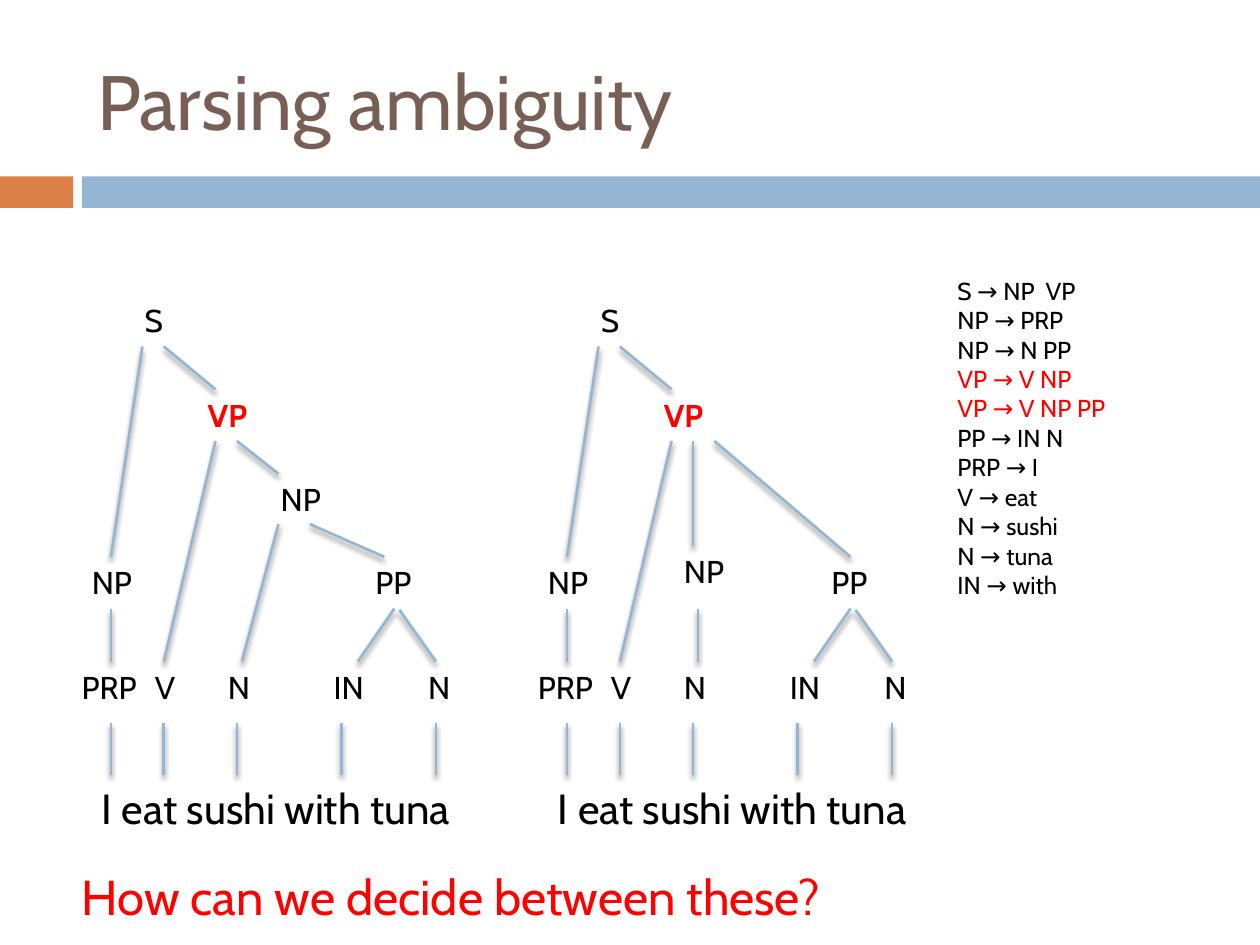
from dataclasses import dataclass

from lxml import etree
from pptx import Presentation
from pptx.dml.color import RGBColor
from pptx.enum.shapes import MSO_CONNECTOR, MSO_SHAPE
from pptx.enum.text import MSO_ANCHOR, MSO_AUTO_SIZE, PP_ALIGN
from pptx.oxml.ns import qn
from pptx.util import Inches, Pt

RECT = MSO_SHAPE.RECTANGLE
STRAIGHT = MSO_CONNECTOR.STRAIGHT
MIDDLE = MSO_ANCHOR.MIDDLE
LEFT = PP_ALIGN.LEFT
GROW = MSO_AUTO_SIZE.SHAPE_TO_FIT_TEXT


@dataclass(frozen=True)
class Theme:
    font: str = "Cabin"
    text: str = "000000"
    title: str = "775F55"
    accent: str = "DD8047"
    line: str = "94B6D2"
    highlight: str = "FF0000"
    title_size: int = 44
    question_size: int = 28
    sentence_size: int = 24
    node_size: int = 18
    rule_size: int = 14
    line_width: float = 1.5


THEME = Theme()

# Tree parts, in inches from the tree's top left corner
LEAF_Y = 2.91
STEM_TOP, STEM_BOTTOM = 3.40, 3.82
STEMS = [0.33, 0.75, 1.33, 2.16, 2.91]
NODES = [  # label, left, top, width
    ("PRP", 0, LEAF_Y, 0.92),
    ("V", 0.58, LEAF_Y, 1.08),
    ("N", 1.16, LEAF_Y, 0.42),
    ("IN", 2.00, LEAF_Y, 0.58),
    ("N", 2.75, LEAF_Y, 0.58),
    ("NP", 0.08, 2.08, 1.08),
    ("PP", 2.33, 2.08, 0.75),
    ("VP", 1.00, 0.75, 0.67),
    ("S", 0.50, 0, 0.67),
]
EDGES = [  # child x, y, parent x, y
    (0.33, LEAF_Y, 0.33, 2.49),
    (2.29, LEAF_Y, 2.58, 2.49),
    (2.91, LEAF_Y, 2.62, 2.50),
    (0.75, LEAF_Y, 1.16, 1.16),
    (0.33, 2.08, 0.58, 0.41),
    (1.16, 0.75, 0.75, 0.41),
]

# What differs: the object noun phrase holds the PP, or stands beside it
NESTED_NP = ("NP", 1.58, 1.42, 0.67)
NESTED_EDGES = [(1.37, LEAF_Y, 1.66, 1.82), (2.50, 2.08, 1.91, 1.82),
                (1.66, 1.42, 1.33, 1.16)]
FLAT_NP = ("NP", 1.16, 1.99, 0.67)
FLAT_EDGES = [(1.37, LEAF_Y, 1.37, 2.49), (1.33, 1.99, 1.33, 1.16),
              (2.58, 2.08, 1.50, 1.16)]

RULES = ["S → NP  VP", "NP → PRP", "NP → N PP", "VP → V NP", "VP → V NP PP",
         "PP → IN N", "PRP → I", "V → eat", "N → sushi", "N → tuna", "IN → with"]


def style(p, size, color, bold=None):
    for r in p.runs:
        r.font.name = THEME.font
        r.font.size = Pt(size)
        r.font.bold = bold
        r.font.color.rgb = RGBColor.from_string(color)


def add_text(s, text, x, y, w, h, size, color=THEME.text, bold=None):
    tf = s.shapes.add_textbox(Inches(x), Inches(y), Inches(w), Inches(h)).text_frame
    tf.word_wrap = True
    tf.auto_size = GROW
    tf.text = text
    for p in tf.paragraphs:
        style(p, size, color, bold)
    return tf


def add_edge(s, x1, y1, x2, y2):
    c = s.shapes.add_connector(STRAIGHT, Inches(x1), Inches(y1), Inches(x2), Inches(y2))
    c.line.color.rgb = RGBColor.from_string(THEME.line)
    c.line.width = Pt(THEME.line_width)
    # Soft shadow straight below the line
    effects = etree.SubElement(c._element.spPr, qn("a:effectLst"))
    shadow = etree.SubElement(effects, qn("a:outerShdw"), blurRad=str(Pt(3)),
                              dist=str(Pt(2.4)), dir="5400000", rotWithShape="0")
    color = etree.SubElement(shadow, qn("a:srgbClr"), val="000000")
    etree.SubElement(color, qn("a:alpha"), val="45000")


def add_header(s, x, y, w):
    # Two-colour band
    for left, width, color in ((0, 0.58, THEME.accent), (0.65, w - 0.65, THEME.line)):
        sp = s.shapes.add_shape(RECT, Inches(x + left), Inches(y + 1.4),
                                Inches(width), Inches(0.25))
        sp.shadow.inherit = False
        sp.fill.solid()
        sp.fill.fore_color.rgb = RGBColor.from_string(color)
        sp.line.fill.background()
    # Title
    title = s.shapes.title
    title.left, title.top = Inches(x + 0.67), Inches(y + 0.25)
    title.width, title.height = Inches(8.92), Inches(1.08)
    tf = title.text_frame
    tf.text = "Parsing ambiguity"
    tf.vertical_anchor = MIDDLE
    p = tf.paragraphs[0]
    p.alignment = LEFT
    style(p, THEME.title_size, THEME.title)


def add_tree(s, x, y, object_np, object_edges):
    add_text(s, "I eat sushi with tuna", x + 0.16, y + STEM_BOTTOM, 4.08, 0.5,
             THEME.sentence_size)
    for label, left, top, width in NODES + [object_np]:
        is_vp = label == "VP"
        add_text(s, label, x + left, y + top, width, 0.4, THEME.node_size,
                 THEME.highlight if is_vp else THEME.text, is_vp)
    stems = [(stem, STEM_TOP, stem, STEM_BOTTOM - 0.01) for stem in STEMS]
    for x1, y1, x2, y2 in stems + EDGES + object_edges:
        add_edge(s, x + x1, y + y1, x + x2, y + y2)


def add_grammar(s, x, y, w, h):
    tf = add_text(s, "\n".join(RULES), x, y, w, h, THEME.rule_size)
    for p in tf.paragraphs:
        if p.text.startswith("VP"):
            style(p, THEME.rule_size, THEME.highlight)


def main():
    prs = Presentation()
    prs.slide_width, prs.slide_height = Inches(10), Inches(7.5)
    s = prs.slides.add_slide(prs.slide_layouts[5])
    add_header(s, 0, 0, 10)
    add_tree(s, 0.55, 2.34, NESTED_NP, NESTED_EDGES)
    add_tree(s, 4.17, 2.34, FLAT_NP, FLAT_EDGES)
    add_grammar(s, 7.5, 2.14, 2.29, 2.76)
    # Closing question
    add_text(s, "How can we decide between these?", 0.55, 6.83, 7.83, 0.57,
             THEME.question_size, THEME.highlight)
    prs.save("out.pptx")


if __name__ == "__main__":
    main()
